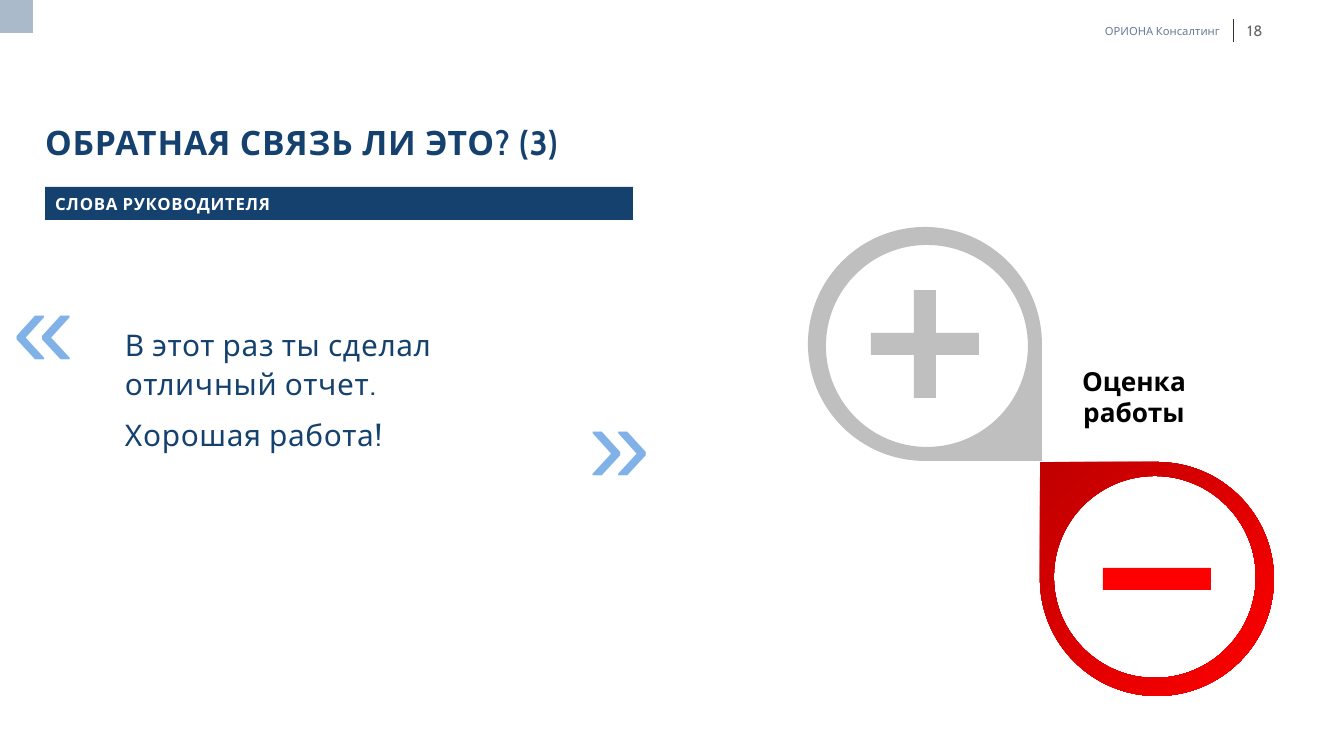
"""Build the feedback slide with a quote and plus and minus drops."""
import math
from lxml import etree
from pptx import Presentation
from pptx import util as u
from pptx.dml.color import RGBColor
from pptx.enum import shapes, text
from pptx.oxml import ns

SCALE = 914400 / 100.8
HARD_SPACE = chr(160)
COLORS = {
    "navy": "15416F", "white": "FFFFFF", "black": "000000", "sky": "80B2E7",
    "slate": "697A98", "number": "666666", "corner": "AABACA", "rule": "333333",
    "gray": "BFBFBF", "red": "FF0000", "dark red": "C00000",
}
LEFT, CENTER, RIGHT = text.PP_ALIGN.LEFT, text.PP_ALIGN.CENTER, text.PP_ALIGN.RIGHT
TOP, MIDDLE, BOTTOM = (text.MSO_ANCHOR.TOP, text.MSO_ANCHOR.MIDDLE,
                       text.MSO_ANCHOR.BOTTOM)

TITLE = {"lines": ["ОБРАТНАЯ СВЯЗЬ ЛИ ЭТО? (3)"], "at": (45, 122, 588, 40),
         "font": {"size": 24, "bold": True, "color": "navy"},
         "spacing": 0.65, "anchor": BOTTOM, "inset": 0}
BAND = {"lines": ["СЛОВА РУКОВОДИТЕЛЯ"], "at": (45, 187, 588, 33),
        "font": {"size": 12, "bold": True, "color": "white"},
        "spacing": 0.5, "anchor": MIDDLE}
QUOTE_MARK = {"font": {"size": 80, "name": "Arial", "color": "sky"},
              "spacing": 0.4, "format": {"space_after": u.Pt(8)}}
BOXES = [
    {"lines": ["ОРИОНА Консалтинг"], "at": (1082, 25, 138, 13),
     "font": {"size": 8, "color": "slate"},
     "align": RIGHT, "anchor": MIDDLE, "inset": 0},
    {"lines": ["18"], "at": (1234, 24, 42, 13),
     "font": {"size": 10.7, "color": "number"}, "spacing": 0.4,
     "align": CENTER, "anchor": MIDDLE, "inset": 0},
    {"lines": ["Оценка работы"], "at": (1032, 360, 204, 74),
     "font": {"size": 18.7, "bold": True, "color": "black"}, "align": CENTER},
    {"lines": ["«"], "at": (3, 251, 92, 146), **QUOTE_MARK},
    {"lines": ["»"], "at": (579, 367, 92, 146), **QUOTE_MARK},
    {"lines": [f"В этот раз ты сделал отличный{HARD_SPACE}отчет.", "Хорошая работа!"],
     "at": (115, 318, 520, 141), "font": {"size": 21.3, "color": "navy"},
     "spacing": 0.53, "format": {"line_spacing": 1.1, "space_after": u.Pt(8)}},
]
DROPS = [
    {"center": (925, 344), "side": 1, "fill": ["gray"], "bars": [(22, 108), (108, 22)]},
    {"center": (1157, 579), "side": -1, "fill": ["dark red", "red"],
     "bars": [(108, 22)]},
]
RADIUS, HOLE_RADIUS, HOLE_SHIFT = 117, 101, 2
CURVE = 4 / 3 * (math.sqrt(2) - 1)
FINE = 100


def px(value):
    return u.Emu(round(value * SCALE))


def color(name):
    return RGBColor.from_string(COLORS[name])


def place(shape, at):
    for name, value in zip(("left", "top", "width", "height"), at):
        setattr(shape, name, px(value))


def write(shape, item):
    frame = shape.text_frame
    settings = {"word_wrap": True, "auto_size": text.MSO_AUTO_SIZE.NONE,
                "vertical_anchor": item.get("anchor", TOP)}
    if "inset" in item:
        for side in ("left", "top", "right", "bottom"):
            settings["margin_" + side] = px(item["inset"])
    for name, value in settings.items():
        setattr(frame, name, value)
    for index, line in enumerate(item["lines"]):
        para = frame.add_paragraph() if index else frame.paragraphs[0]
        layout = {"alignment": item.get("align", LEFT), "space_before": u.Pt(0),
                  **item.get("format", {})}
        for name, value in layout.items():
            setattr(para, name, value)
        span = para.add_run()
        span.text = line
        font = {"name": "Cabin", "bold": False, **item["font"]}
        span.font.color.rgb = color(font.pop("color"))
        font["size"] = u.Pt(font["size"])
        for name, value in font.items():
            setattr(span.font, name, value)
        span.font._element.set("spc", str(round(item.get("spacing", 0) * 100)))


def paint(shape, names):
    shape.shadow.inherit = False
    shape.line.fill.background()
    if len(names) == 1:
        shape.fill.solid()
        shape.fill.fore_color.rgb = color(names[0])
        return
    shape.fill.gradient()
    shape.fill.gradient_angle = 315
    for stop, name in zip(shape.fill.gradient_stops, names):
        stop.color.rgb = color(name)


def add_block(page, at, name):
    block = page.shapes.add_shape(shapes.MSO_SHAPE.RECTANGLE, *map(px, at))
    paint(block, [name])


def draw(outline, command, *points):
    step = etree.SubElement(outline, ns.qn("a:" + command))
    for x, y in points:
        etree.SubElement(step, ns.qn("a:pt"), x=str(round(x * FINE)),
                         y=str(round(y * FINE)))


def draw_arc(outline, middle, radius, start, quarters, way):
    def spot(angle, bend=0):
        cos, sin = math.cos(angle), math.sin(angle)
        return (middle + radius * (cos - bend * sin),
                middle + radius * (sin + bend * cos))

    draw(outline, "moveTo", spot(math.radians(start)))
    for quarter in range(quarters):
        begin = math.radians(start + way * 90 * quarter)
        end = begin + way * math.pi / 2
        draw(outline, "cubicBezTo", spot(begin, way * CURVE),
             spot(end, -way * CURVE), spot(end))


def add_drop(page, drop):
    x, y = drop["center"]
    side = drop["side"]
    left, top, size = x - RADIUS, y - RADIUS, 2 * RADIUS
    builder = page.shapes.build_freeform(left, top, scale=SCALE)
    builder.add_line_segments([(left + size, top), (left + size, top + size)])
    shape = builder.convert_to_shape()
    outline = next(shape._element.iter(ns.qn("a:path")))
    for step in list(outline):
        outline.remove(step)
    for name in ("w", "h"):
        outline.set(name, str(size * FINE))
    draw_arc(outline, RADIUS, RADIUS, 90 * side, 3, 1)
    corner = RADIUS + side * RADIUS
    draw(outline, "lnTo", (corner, corner))
    draw(outline, "close")
    draw_arc(outline, RADIUS + side * HOLE_SHIFT, HOLE_RADIUS, 90, 4, -1)
    draw(outline, "close")
    paint(shape, drop["fill"])
    for width, height in drop["bars"]:
        add_block(page, (x - width / 2, y - height / 2, width, height),
                  drop["fill"][-1])


def main():
    deck = Presentation()
    deck.slide_width, deck.slide_height = px(1344), px(756)
    page = deck.slides.add_slide(deck.slide_layouts[1])

    add_block(page, (0, 0, 33, 33), "corner")
    rule = page.shapes.add_connector(shapes.MSO_CONNECTOR.STRAIGHT,
                                     *map(px, (1233, 19, 1233, 42)))
    rule.line.width = u.Pt(0.5)
    rule.line.color.rgb = color("rule")
    etree.SubElement(rule._element.spPr, ns.qn("a:effectLst"))

    title, band = page.placeholders
    for shape, item in ((title, TITLE), (band, BAND)):
        place(shape, item["at"])
        write(shape, item)
    band.fill.solid()
    band.fill.fore_color.rgb = color("navy")
    settings = band.text_frame.paragraphs[0]._p.get_or_add_pPr()
    settings.set("marL", "0")
    settings.set("indent", "0")
    etree.SubElement(settings, ns.qn("a:buNone"))

    for drop in DROPS:
        add_drop(page, drop)
    for item in BOXES:
        write(page.shapes.add_textbox(*map(px, item["at"])), item)
    deck.save("out.pptx")


if __name__ == "__main__":
    main()
